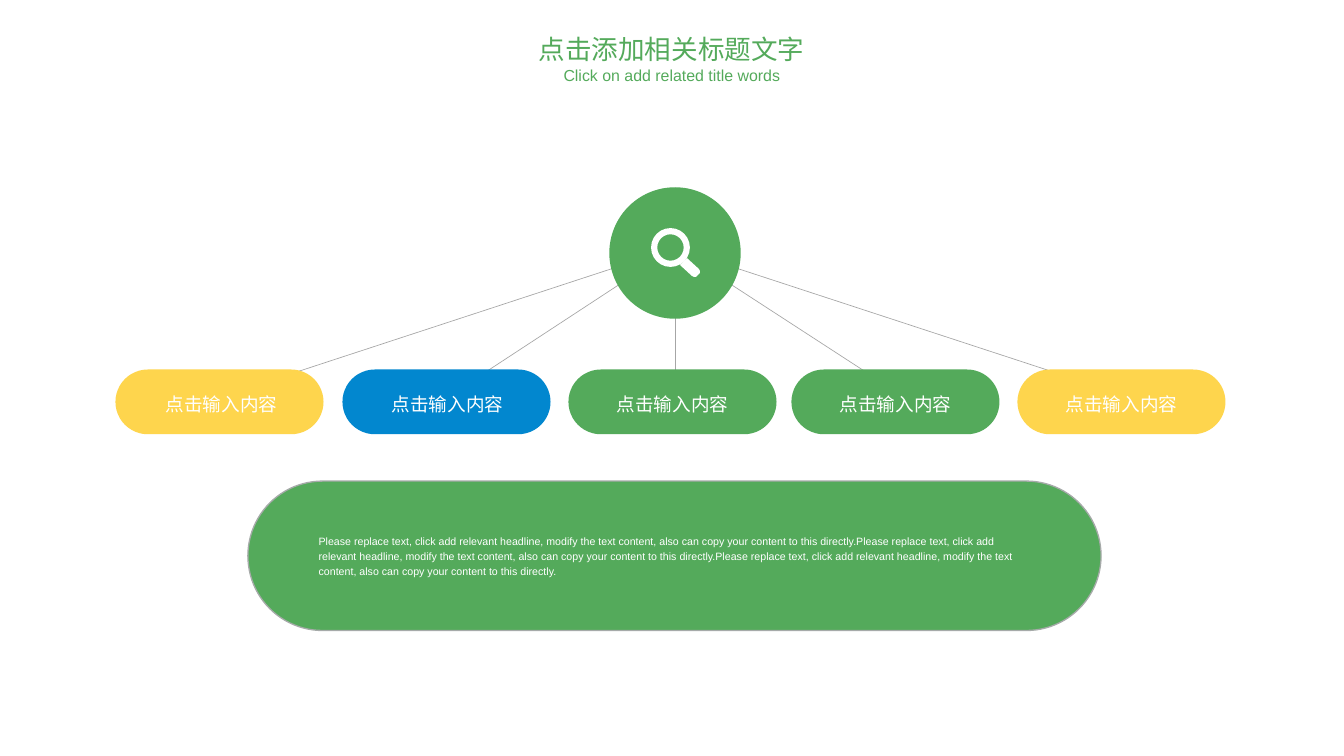
from pptx import Presentation
from pptx import util as u
from pptx.dml.color import RGBColor
from pptx.enum import shapes, text
from pptx.oxml import ns
from lxml import etree

PX = 9525  # EMU in one px
GREEN, YELLOW, BLUE, WHITE = "54AA5B", "FED54D", "0287CF", "FFFFFF"


def paint(target, fill, line=None):
    target.shadow.inherit = False
    target.fill.solid()
    target.fill.fore_color.rgb = RGBColor.from_string(fill)
    if line:
        target.line.color.rgb = RGBColor.from_string(line)
        target.line.width = u.Pt(1)
    else:
        target.line.fill.background()


def write(target, words, size, color, font="Arial", align=text.PP_ALIGN.CENTER,
          anchor=text.MSO_ANCHOR.MIDDLE, margins=(0, 0), spacing=1.2, before=10, after=0):
    frame = target.text_frame
    frame.word_wrap = True
    frame.auto_size = text.MSO_AUTO_SIZE.NONE
    frame.vertical_anchor = anchor
    frame.margin_left = frame.margin_right = margins[0] * PX
    frame.margin_top = frame.margin_bottom = margins[1] * PX
    paragraph = frame.paragraphs[0]
    paragraph.alignment = align
    paragraph.line_spacing = spacing
    paragraph.space_before, paragraph.space_after = u.Pt(before), u.Pt(after)
    run = paragraph.add_run()
    run.text = words
    run.font.name, run.font.size = font, u.Pt(size)
    run.font.color.rgb = RGBColor.from_string(color)
    etree.SubElement(run.font._element, ns.qn("a:ea")).set("typeface", font)


prs = Presentation()
prs.slide_width, prs.slide_height = 1350 * PX, 759 * PX
slide = prs.slides.add_slide(prs.slide_layouts[5])
items = slide.shapes

# Title and subtitle
title = items.title
title.left, title.top, title.width, title.height = 514 * PX, 28 * PX, 321 * PX, 39 * PX
subtitle = items.add_textbox(553 * PX, 61 * PX, 244 * PX, 39 * PX)
heading = dict(color=GREEN, anchor=text.MSO_ANCHOR.TOP, margins=(10, 5), spacing=1.0, after=6)
write(title, "点击添加相关标题文字", 20, font="Noto Sans CJK SC", before=4, **heading)
write(subtitle, "Click on add related title words", 12, before=2, **heading)

# Spokes from the hub, running behind the topics
for spoke_x in (678, 1136, 909, 449, 220):
    spoke = items.add_connector(shapes.MSO_CONNECTOR.STRAIGHT,
                                678 * PX, 249 * PX, spoke_x * PX, 399 * PX)
    spoke.line.color.rgb = RGBColor.from_string("A6A6A6")
    spoke.line.width = u.Pt(0.5)
    etree.SubElement(spoke._element.spPr, ns.qn("a:effectLst"))

# Topics: pill left, label left, colour
topics = ((116, 119, YELLOW), (344, 346, BLUE), (571, 572, GREEN),
          (795, 796, GREEN), (1022, 1023, YELLOW))
for pill_x, label_x, color in topics:
    pill = items.add_shape(shapes.MSO_SHAPE.ROUNDED_RECTANGLE,
                           pill_x * PX, 371 * PX, 209 * PX, 65 * PX)
    pill.adjustments[0] = 0.5
    paint(pill, color)
    label = items.add_textbox(label_x * PX, 381 * PX, 207 * PX, 45 * PX)
    write(label, "点击输入内容", 14, WHITE)

# Hub
hub = items.add_shape(shapes.MSO_SHAPE.OVAL, 612 * PX, 188 * PX, 132 * PX, 132 * PX)
paint(hub, GREEN)

# Magnifier: lens ring and handle
lens = items.add_shape(shapes.MSO_SHAPE.DONUT, 654 * PX, 229 * PX, 39 * PX, 39 * PX)
lens.adjustments[0] = 0.16
paint(lens, WHITE)
outline = items.build_freeform(683, 266, scale=PX)
outline.add_line_segments([(695, 277), (697, 278), (699, 278), (703, 274),
                           (703, 272), (702, 270), (690, 259)])
handle = outline.convert_to_shape()
paint(handle, WHITE)

# Description panel
panel = items.add_shape(shapes.MSO_SHAPE.ROUNDED_RECTANGLE,
                        249 * PX, 483 * PX, 857 * PX, 150 * PX)
panel.adjustments[0] = 0.5
paint(panel, GREEN, "A6AAA9")
description = items.add_textbox(320 * PX, 515 * PX, 708 * PX, 84 * PX)
sentence = ("Please replace text, click add relevant headline, modify the text content, "
            "also can copy your content to this directly.")
write(description, sentence * 3, 8, WHITE, align=text.PP_ALIGN.LEFT)

prs.save("out.pptx")
